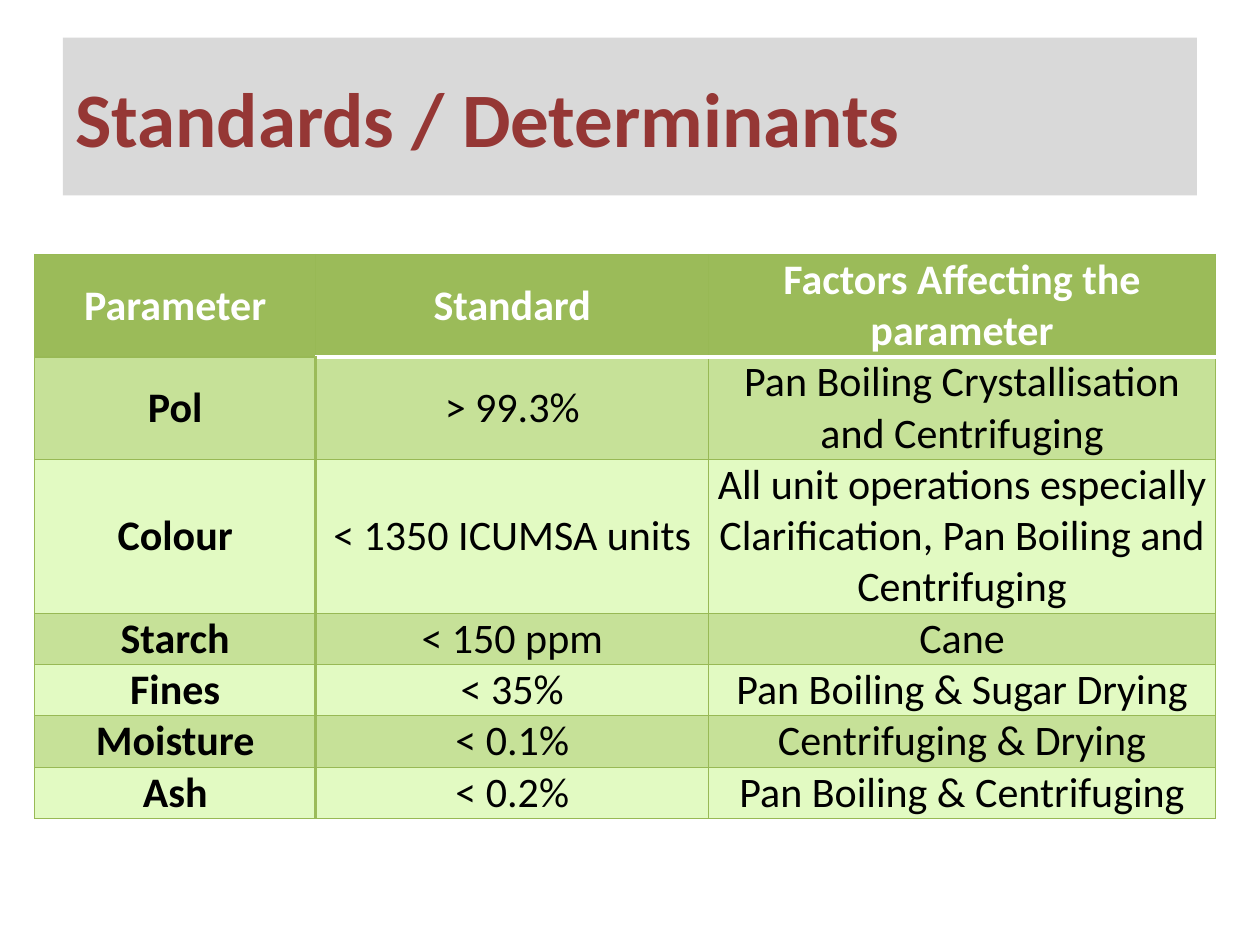
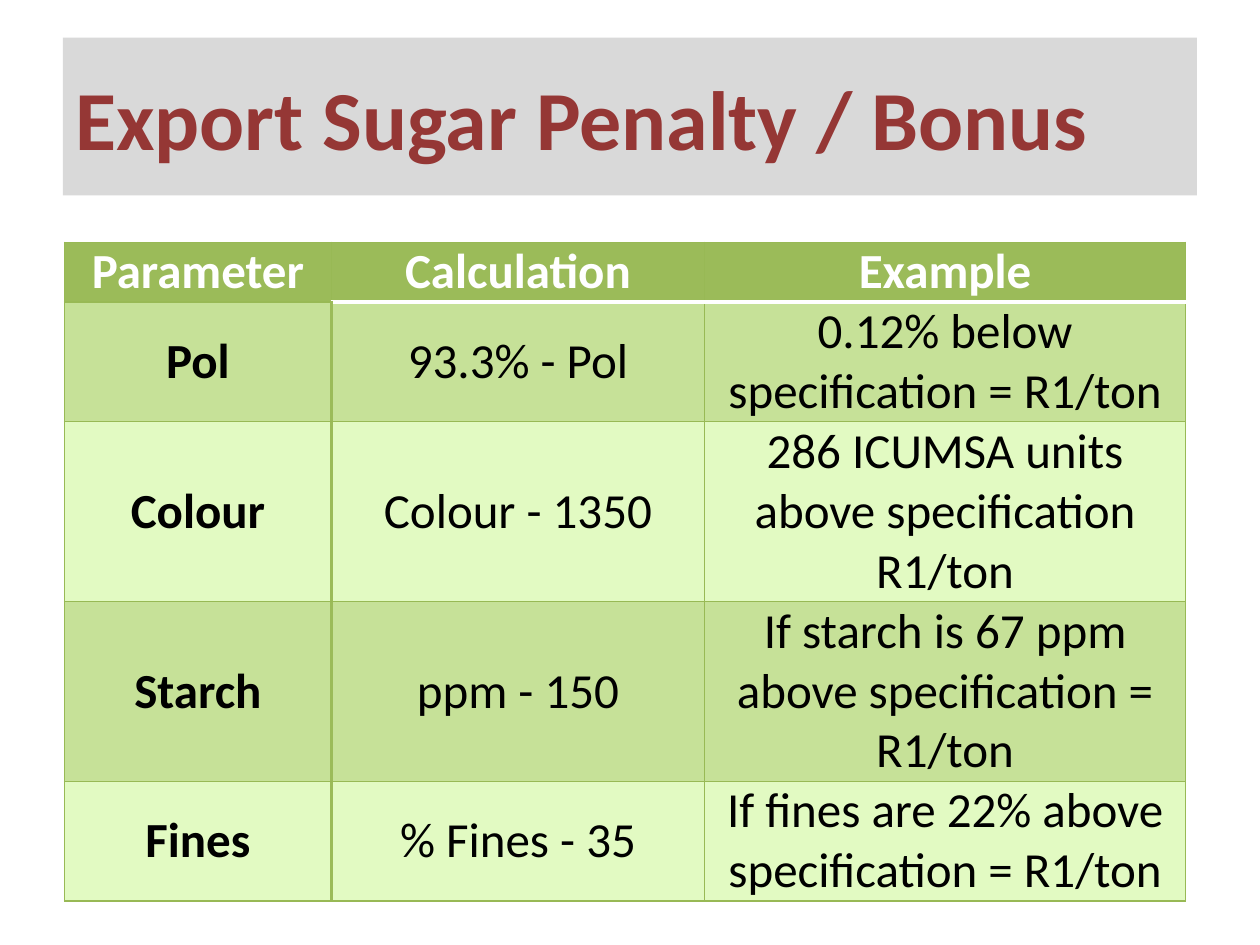
"""Build two slides on sugar quality standards and export penalties."""
from dataclasses import dataclass

from lxml.etree import SubElement
from pptx import Presentation
from pptx.dml.color import RGBColor
from pptx.enum.shapes import MSO_SHAPE
from pptx.enum.text import MSO_ANCHOR, PP_ALIGN
from pptx.oxml.ns import qn
from pptx.util import Cm, Pt


@dataclass(frozen=True)
class Theme:
    """Colours, font, type sizes and line weights shared by the slides."""
    font: str = "Calibri"
    title: str = "953735"
    band: str = "D9D9D9"
    header: str = "9BBB59"
    row_dark: str = "C6E198"
    row_light: str = "E2FAC2"
    grid: str = "98B955"
    white: str = "FFFFFF"
    text: str = "000000"
    title_sizes: tuple = (44, 48)
    table_sizes: tuple = (24, 28)
    thin: float = 0.75
    thick: float = 2
    line_height: float = 1.22
    column_shares: tuple = (0.238, 0.333, 0.429)


THEME = Theme()

STANDARDS = [
    ("Parameter", "Standard", "Factors Affecting the parameter"),
    ("Pol", "˃ 99.3%", "Pan Boiling Crystallisation and Centrifuging"),
    ("Colour", "˂ 1350 ICUMSA units",
     "All unit operations especially Clarification, Pan Boiling and Centrifuging"),
    ("Starch", "˂ 150 ppm", "Cane"),
    ("Fines", "˂ 35%", "Pan Boiling & Sugar Drying"),
    ("Moisture", "˂ 0.1%", "Centrifuging & Drying"),
    ("Ash", "˂ 0.2%", "Pan Boiling & Centrifuging"),
]
PENALTIES = [
    ("Parameter", "Calculation", "Example"),
    ("Pol", "93.3% - Pol", "0.12% below specification = R1/ton"),
    ("Colour", "Colour - 1350", "286 ICUMSA units above specification R1/ton"),
    ("Starch", "ppm - 150", "If starch is 67 ppm above specification = R1/ton"),
    ("Fines", "% Fines - 35", "If fines are 22% above specification = R1/ton"),
]


def format_text(tf, size, color, bold, align):
    """Format the single paragraph of a text frame."""
    p = tf.paragraphs[0]
    p.alignment = align
    for r in p.runs:
        r.font.name = THEME.font
        r.font.size = Pt(size)
        r.font.bold = bold
        r.font.color.rgb = RGBColor.from_string(color)


def add_title(s, text, size):
    """Add the grey title band."""
    sp = s.shapes.add_shape(MSO_SHAPE.RECTANGLE, Cm(1.27), Cm(0.76), Cm(22.86), Cm(3.18))
    sp.shadow.inherit = False
    sp.fill.solid()
    sp.fill.fore_color.rgb = RGBColor.from_string(THEME.band)
    sp.line.fill.background()
    tf = sp.text_frame
    tf.word_wrap = True
    tf.vertical_anchor = MSO_ANCHOR.MIDDLE
    tf.text = text
    format_text(tf, size, THEME.title, True, PP_ALIGN.LEFT)


def set_borders(cell, row, col):
    """Draw the cell edges: thin grid, thick key column, white header rule."""
    thin = (THEME.grid, THEME.thin)
    key = (THEME.header, THEME.thick)
    rule = (THEME.white, THEME.thick)
    edges = {
        "a:lnL": key if row and col == 1 else thin,
        "a:lnR": key if row and col == 0 else thin,
        "a:lnT": rule if row == 1 and col else thin,
        "a:lnB": rule if row == 0 and col else thin,
    }
    tc_pr = cell._tc.get_or_add_tcPr()
    for tag, (color, weight) in edges.items():
        ln = SubElement(tc_pr, qn(tag), w=str(Pt(weight)))
        fill = SubElement(ln, qn("a:solidFill"))
        SubElement(fill, qn("a:srgbClr"), val=color)


def style_cell(cell, row, col, size):
    """Apply edges, banded fill and text format by position in the table."""
    set_borders(cell, row, col)
    band = THEME.row_dark if row % 2 else THEME.row_light
    cell.fill.solid()
    cell.fill.fore_color.rgb = RGBColor.from_string(band if row else THEME.header)
    cell.margin_left = cell.margin_right = Cm(0.18)
    cell.margin_top = cell.margin_bottom = 0
    cell.vertical_anchor = MSO_ANCHOR.MIDDLE
    color = THEME.text if row else THEME.white
    format_text(cell.text_frame, size, color, row == 0 or col == 0, PP_ALIGN.CENTER)


def add_data_table(s, data, lines, left, top, width, size):
    """Add a table whose row heights follow the text lines in each row."""
    heights = [Pt(n * size * THEME.line_height) for n in lines]
    frame = s.shapes.add_table(len(data), len(data[0]), left, top, width, sum(heights))
    table = frame.table
    for column, share in zip(table.columns, THEME.column_shares):
        column.width = int(width * share)
    for i, values in enumerate(data):
        table.rows[i].height = heights[i]
        for j, value in enumerate(values):
            cell = table.cell(i, j)
            cell.text_frame.text = value
            style_cell(cell, i, j, size)


def main():
    """Build and save the presentation."""
    prs = Presentation()
    prs.slide_width, prs.slide_height = Cm(25.4), Cm(19.05)
    slides = [
        ("Standards / Determinants", STANDARDS, (2, 2, 3, 1, 1, 1, 1),
         Cm(0.7), Cm(5.13), Cm(23.8)),
        ("Export Sugar Penalty / Bonus", PENALTIES, (1, 2, 3, 3, 2),
         Cm(1.3), Cm(4.88), Cm(22.6)),
    ]
    sizes = zip(THEME.title_sizes, THEME.table_sizes)
    for (title, data, lines, left, top, width), (title_size, size) in zip(slides, sizes):
        s = prs.slides.add_slide(prs.slide_layouts[6])
        add_title(s, title, title_size)
        add_data_table(s, data, lines, left, top, width, size)
    prs.save("out.pptx")


if __name__ == "__main__":
    main()
